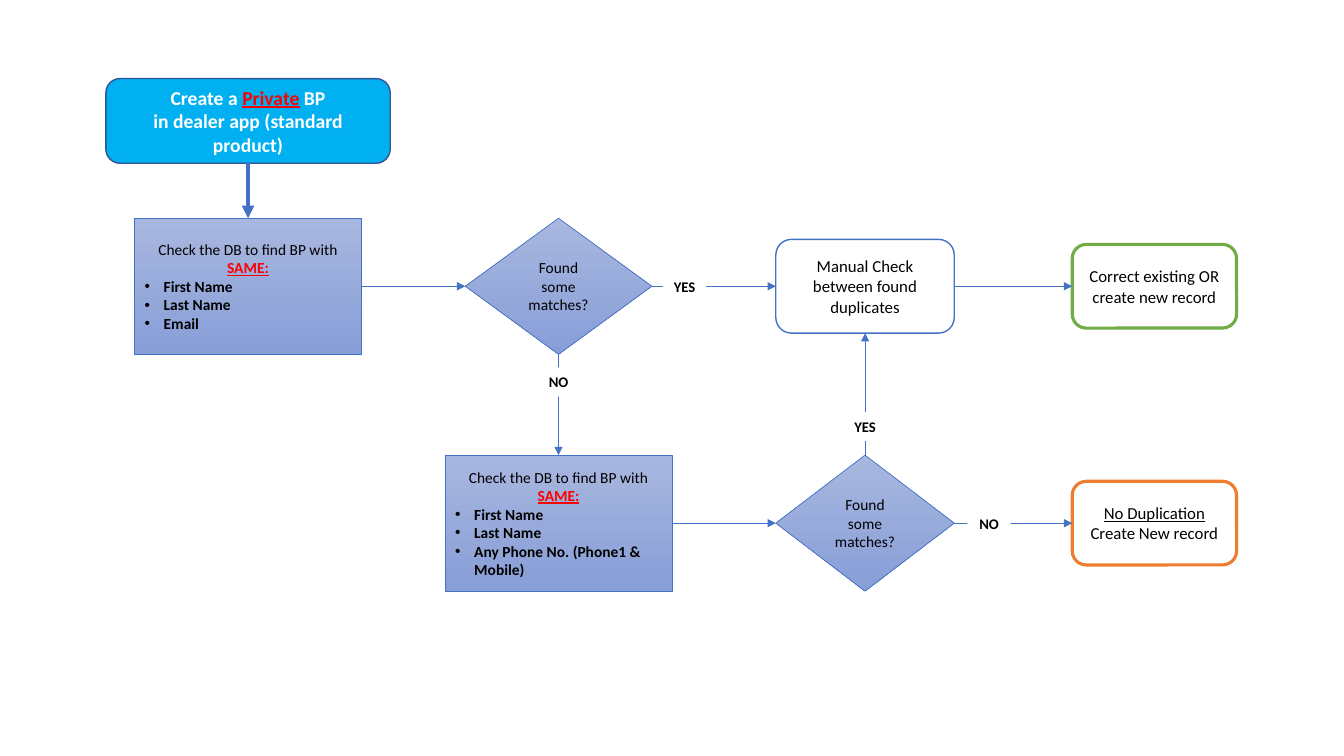
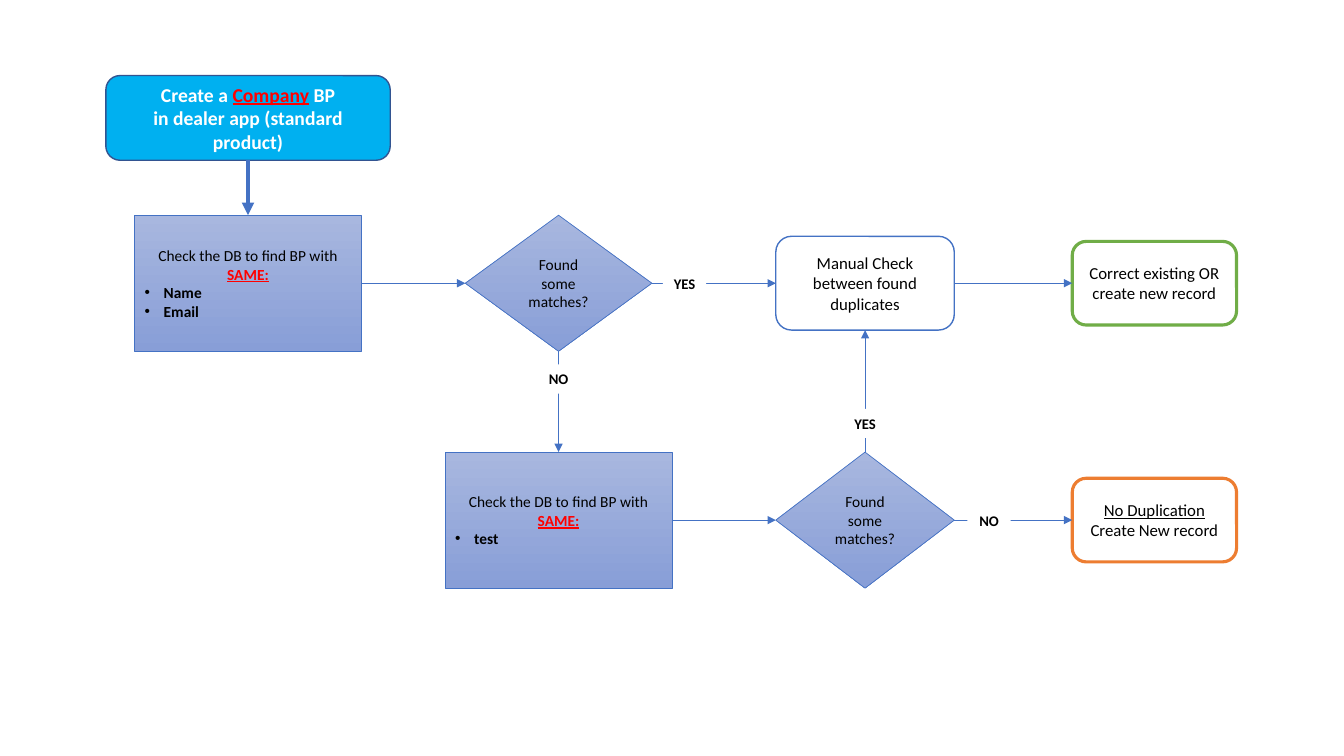
from lxml import etree
from pptx import Presentation
from pptx.dml.color import RGBColor
from pptx.enum.shapes import MSO_CONNECTOR, MSO_SHAPE
from pptx.enum.text import MSO_ANCHOR, MSO_AUTO_SIZE, PP_ALIGN
from pptx.oxml.ns import qn
from pptx.util import Inches, Pt

ROUND, RECT = MSO_SHAPE.ROUNDED_RECTANGLE, MSO_SHAPE.RECTANGLE
DIAMOND, STRAIGHT = MSO_SHAPE.DIAMOND, MSO_CONNECTOR.STRAIGHT
MIDDLE, FIXED = MSO_ANCHOR.MIDDLE, MSO_AUTO_SIZE.NONE
LEFT, CENTER = PP_ALIGN.LEFT, PP_ALIGN.CENTER
TOP, WEST, BOTTOM, EAST = range(4)

HUES = {
    "sky": "00B0F0", "navy": "325491", "blue": "4472C4", "green": "70AD47",
    "orange": "ED7D31", "red": "FF0000", "white": "FFFFFF", "black": "000000",
    "pale": "A8B7DF", "deep": "889ED7",
}
HUE = {name: RGBColor.from_string(code) for name, code in HUES.items()}

# Text looks: hue and font attributes
LOOKS = {
    "plain": ("black", {"bold": False, "underline": False}),
    "bold": ("black", {"bold": True, "underline": False}),
    "under": ("black", {"bold": False, "underline": True}),
    "head": ("white", {"bold": True, "underline": False}),
    "key": ("red", {"bold": True, "underline": True}),
    "item": ("black", {"bold": True, "underline": False}),
}

# Centres of the grid's columns and rows, in inches
COLS = [2.46, 5.54, 8.58, 11.45]
ROWS = [1.2, 2.84, 5.19]

# Box looks: outline, fill, line hue, line width, text size
KINDS = {
    "start": (ROUND, "sky", "navy", 1, 14),
    "check": (RECT, None, "blue", 0.5, 11),
    "ask": (DIAMOND, None, "blue", 0.5, 11),
    "review": (ROUND, "white", "blue", 1, 12),
    "fix": (ROUND, "white", "green", 2.25, 12),
    "new": (ROUND, "white", "orange", 2.25, 12),
}

# Name: kind, column, row, width, height
BOXES = {
    "start": ("start", 0, 0, 2.82, 0.84),
    "check1": ("check", 0, 1, 2.25, 1.35),
    "ask1": ("ask", 1, 1, 1.85, 1.35),
    "review": ("review", 2, 1, 1.77, 0.93),
    "fix": ("fix", 3, 1, 1.63, 0.83),
    "check2": ("check", 1, 2, 2.25, 1.35),
    "ask2": ("ask", 2, 2, 1.77, 1.35),
    "new": ("new", 3, 2, 1.63, 0.83),
}

LINKS = [
    ("start", BOTTOM, "check1", TOP, 3),
    ("check1", EAST, "ask1", WEST, 0.5),
    ("ask1", EAST, "review", WEST, 0.5),
    ("review", EAST, "fix", WEST, 0.5),
    ("ask1", BOTTOM, "check2", TOP, 0.5),
    ("check2", EAST, "ask2", WEST, 0.5),
    ("ask2", TOP, "review", BOTTOM, 0.5),
    ("ask2", EAST, "new", WEST, 0.5),
]

# Answer labels: text, centre x, centre y
TAGS = [
    ("YES", 6.79, ROWS[1]), ("NO", COLS[1], 3.79),
    ("YES", COLS[2], 4.23), ("NO", 9.81, ROWS[2]),
]

# Slide: kind of partner, vertical shift, fields of each check
FLOWS = [
    ("Private", 0, ["First Name", "Last Name", "Email"],
     ["First Name", "Last Name", "Any Phone No. (Phone1 & Mobile)"]),
    ("Company", -0.03, ["Name", "Email"], ["test"]),
]


def write(frame, size, paras):
    """Fill a frame with paragraphs, each a list of (text, look) runs."""
    frame.word_wrap = True
    frame.auto_size = FIXED
    frame.vertical_anchor = MIDDLE
    for i, runs in enumerate(paras):
        para = frame.add_paragraph() if i else frame.paragraphs[0]
        para.alignment = CENTER
        if runs[0][1] == "item":
            para.alignment = LEFT
            props = para._p.get_or_add_pPr()
            props.set("marL", str(Inches(0.19)))
            props.set("indent", str(-Inches(0.19)))
            etree.SubElement(props, qn("a:buFont")).set("typeface", "Arial")
            etree.SubElement(props, qn("a:buChar")).set("char", "•")
        for text, look in runs:
            run = para.add_run()
            run.text = text
            hue, form = LOOKS[look]
            run.font.name, run.font.size = "Calibri", Pt(size)
            run.font.color.rgb = HUE[hue]
            for name, value in form.items():
                setattr(run.font, name, value)


def place(slide, form, x, y, wide, high):
    """Add a shadowless shape centred on x, y."""
    shape = slide.shapes.add_shape(
        form, Inches(x - wide / 2), Inches(y - high / 2), Inches(wide), Inches(high))
    shape.shadow.inherit = False
    return shape


deck = Presentation()
deck.slide_width, deck.slide_height = Inches(13.33), Inches(7.5)

for partner, shift, first, second in FLOWS:
    slide = deck.slides.add_slide(deck.slide_layouts[5])
    ask = [[("Found some matches?", "plain")]]
    lead = [("Check the DB to find BP with ", "plain"), ("SAME:", "key")]
    texts = {
        "check1": [lead] + [[(field, "item")] for field in first],
        "check2": [lead] + [[(field, "item")] for field in second],
        "ask1": ask,
        "ask2": ask,
        "review": [[("Manual Check between found duplicates", "plain")]],
        "fix": [[("Correct existing OR create new record", "plain")]],
        "new": [[("No Duplication", "under")], [("Create New record", "plain")]],
    }

    # Boxes
    boxes = {}
    for name, (kind, col, row, wide, high) in BOXES.items():
        form, fill, edge, width, size = KINDS[kind]
        box = place(slide, form, COLS[col], ROWS[row] + shift, wide, high)
        if fill:
            box.fill.solid()
            box.fill.fore_color.rgb = HUE[fill]
        else:
            box.fill.gradient()
            box.fill.gradient_angle = 270
            for stop, hue in zip(box.fill.gradient_stops, ("pale", "deep")):
                stop.color.rgb = HUE[hue]
        box.line.color.rgb = HUE[edge]
        box.line.width = Pt(width)
        if name in texts:
            write(box.text_frame, size, texts[name])
        boxes[name] = box

    # Title, in front of the start box
    title, start = slide.shapes.title, boxes["start"]
    for side in ("left", "top", "width", "height"):
        setattr(title, side, getattr(start, side))
    title.text_frame.margin_left = title.text_frame.margin_right = Inches(0.14)
    write(title.text_frame, KINDS["start"][-1], [
        [("Create a ", "head"), (partner, "key"), (" BP", "head")],
        [("in dealer app (standard product)", "head")]])
    start.element.addnext(title.element)

    # Arrows
    for tail, out, head, into, width in LINKS:
        link = slide.shapes.add_connector(STRAIGHT, 0, 0, 0, 0)
        link.begin_connect(boxes[tail], out)
        link.end_connect(boxes[head], into)
        link.line.color.rgb = HUE["blue"]
        link.line.width = Pt(width)
        line = link.line._get_or_add_ln()
        etree.SubElement(line, qn("a:tailEnd")).set("type", "triangle")
        etree.SubElement(link.element.spPr, qn("a:effectLst"))

    # Answers
    for text, x, y in TAGS:
        tag = place(slide, RECT, x, y + shift, 0.43, 0.29)
        tag.fill.solid()
        tag.fill.fore_color.rgb = HUE["white"]
        tag.line.fill.background()
        tag.text_frame.margin_left = tag.text_frame.margin_right = 0
        write(tag.text_frame, 10.5, [[(text, "bold")]])

deck.save("out.pptx")
